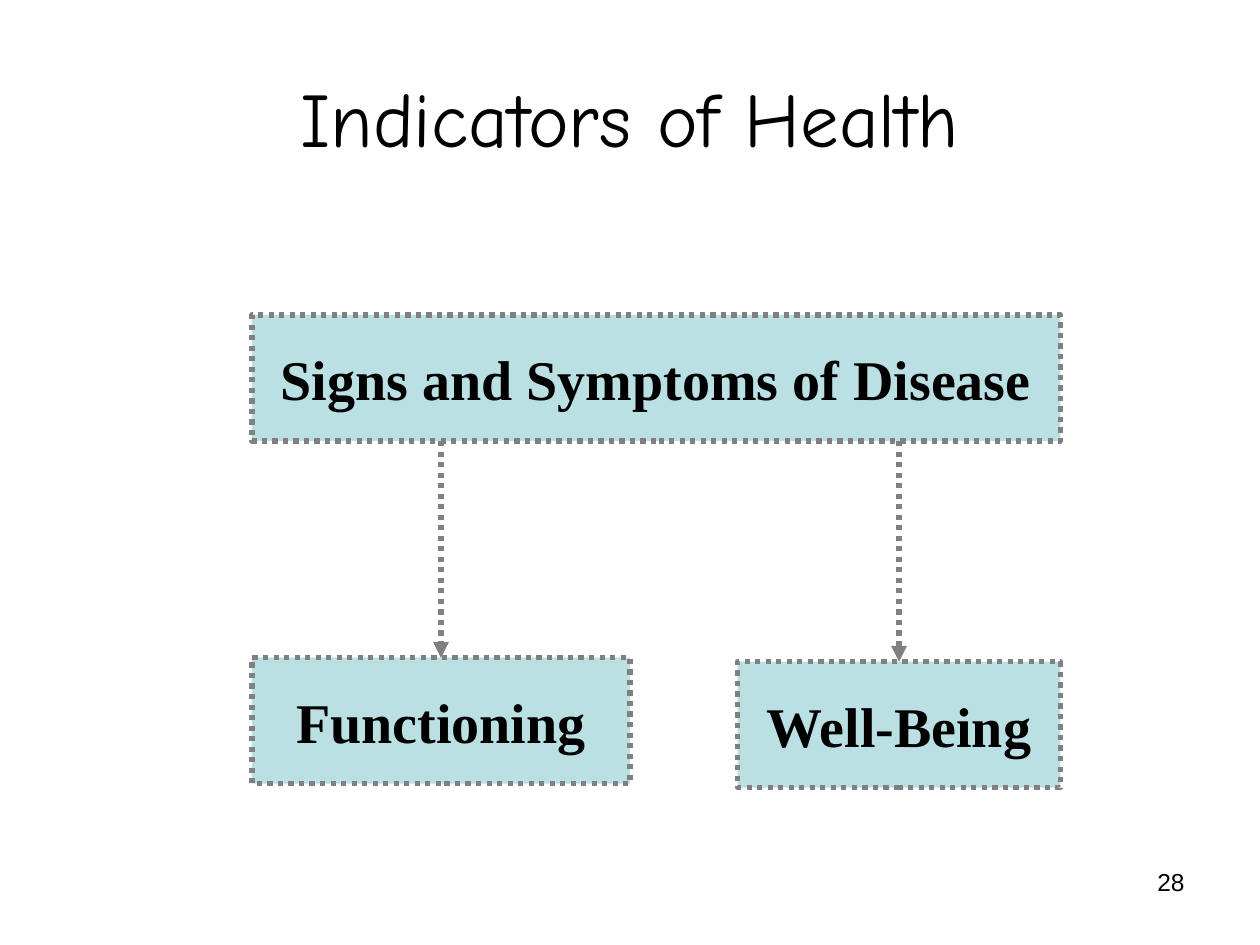
from lxml.etree import SubElement
from pptx import Presentation
from pptx.dml.color import RGBColor
from pptx.enum.dml import MSO_LINE_DASH_STYLE as Dash
from pptx.enum.shapes import MSO_CONNECTOR as Connector, MSO_SHAPE as Shape
from pptx.enum.text import MSO_ANCHOR as Anchor, PP_ALIGN as Align
from pptx.oxml.ns import qn
from pptx.util import Cm, Pt

BLACK, GREY, TEAL = "000000", "808080", "BBE0E3"
BOX_HEIGHT = 2.54


def color(value):
    """Return the colour of a hex string."""
    return RGBColor.from_string(value)


def write(shape, text, font, size, align, bold=False):
    """Put one formatted paragraph into a shape."""
    shape.text_frame.text = text
    paragraph = shape.text_frame.paragraphs[0]
    paragraph.alignment = align
    paragraph.font.name = font
    paragraph.font.size = Pt(size)
    paragraph.font.bold = bold
    paragraph.font.color.rgb = color(BLACK)


def style_line(line):
    """Give a line the dotted grey stroke of the diagram."""
    line.color.rgb = color(GREY)
    line.width = Pt(3)
    line.dash_style = Dash.ROUND_DOT


def add_title(slide, text):
    """Fill and place the title placeholder."""
    title = slide.shapes.title
    title.left, title.top = Cm(0), Cm(0.76)
    title.width, title.height = Cm(25.4), Cm(3.18)
    title.text_frame.vertical_anchor = Anchor.MIDDLE
    write(title, text, "Comic Neue", 44, Align.CENTER)


def add_page_number(slide, text):
    """Add the page number at the lower right."""
    box = slide.shapes.add_textbox(Cm(18.21), Cm(17.35), Cm(5.92), Cm(1.32))
    box.text_frame.word_wrap = True
    write(box, text, "Arial", 14, Align.RIGHT)


def add_box(slide, text, left, top, width):
    """Add a labelled box with a dotted outline."""
    box = slide.shapes.add_shape(
        Shape.RECTANGLE, Cm(left), Cm(top), Cm(width), Cm(BOX_HEIGHT))
    box.shadow.inherit = False
    box.fill.solid()
    box.fill.fore_color.rgb = color(TEAL)
    style_line(box.line)
    box.text_frame.word_wrap = False
    box.text_frame.vertical_anchor = Anchor.MIDDLE
    write(box, text, "Times New Roman", 32, Align.CENTER, bold=True)
    return box


def add_arrow(slide, source, target):
    """Drop an arrow from the source's lower edge to the target's top middle."""
    x = target.left + target.width // 2
    arrow = slide.shapes.add_connector(
        Connector.STRAIGHT, x, source.top + source.height, x, target.top)
    arrow.end_connect(target, 0)
    style_line(arrow.line)
    SubElement(arrow.line._get_or_add_ln(), qn("a:tailEnd"), type="triangle")
    SubElement(arrow._element.spPr, qn("a:effectLst"))


def main():
    """Build the slide and save it."""
    presentation = Presentation()
    presentation.slide_width, presentation.slide_height = Cm(25.4), Cm(19.05)
    slide = presentation.slides.add_slide(presentation.slide_layouts[5])
    add_title(slide, "Indicators of Health")
    add_page_number(slide, "28")
    disease = add_box(slide, "Signs and Symptoms of Disease", 5.08, 6.35, 16.3)
    functioning = add_box(slide, "Functioning", 5.08, 13.26, 7.62)
    well_being = add_box(slide, "Well-Being", 14.87, 13.34, 6.51)
    for target in (well_being, functioning):
        add_arrow(slide, disease, target)
    presentation.save("out.pptx")


if __name__ == "__main__":
    main()
